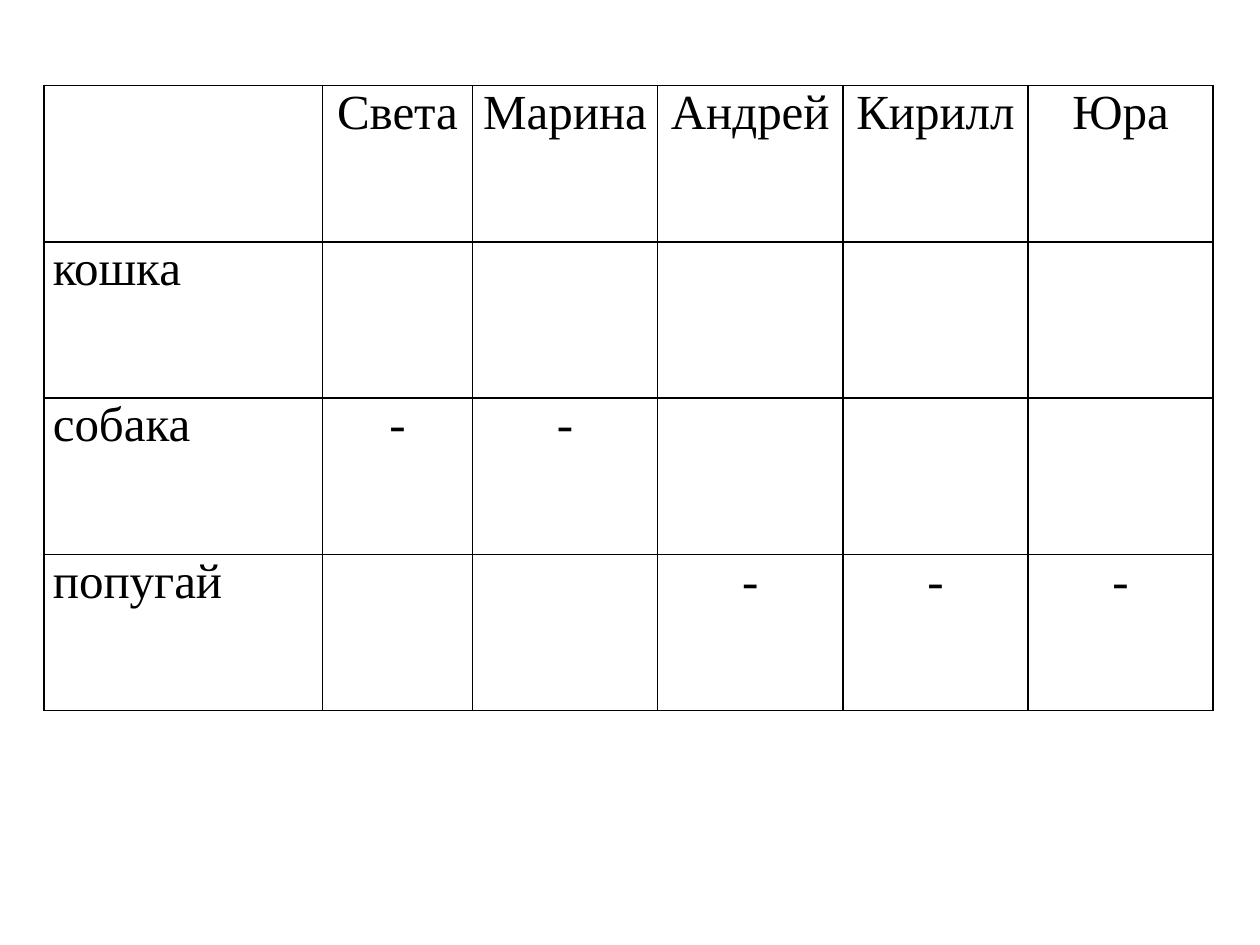
"""Build a slide with a logic table of children and their pets."""
from lxml import etree
from pptx import Presentation
from pptx.dml.color import RGBColor
from pptx.enum.text import PP_ALIGN
from pptx.oxml.ns import qn
from pptx.util import Inches, Pt

CENTER, JUSTIFY = PP_ALIGN.CENTER, PP_ALIGN.JUSTIFY
BLACK = RGBColor(0, 0, 0)
FONT = "Times New Roman"
LEFT, TOP = 0.35, 0.68
COLS = [2.21, 1.19] + [1.47] * 4
ROW = 1.24
ROWS = [
    ["", "Света", "Марина", "Андрей", "Кирилл", "Юра"],
    ["кошка", "", "", "", "", ""],
    ["собака", "-", "-", "", "", ""],
    ["попугай", "", "", "-", "-", "-"],
]


def add_edges(cell):
    props = cell._tc.get_or_add_tcPr()
    for side in ("lnL", "lnR", "lnT", "lnB"):
        line = etree.SubElement(props, qn(f"a:{side}"), w=str(Pt(1)))
        fill = etree.SubElement(line, qn("a:solidFill"))
        etree.SubElement(fill, qn("a:srgbClr"), val=str(BLACK))


def fill_cell(cell, text, align):
    cell.margin_left = cell.margin_right = Inches(0.07)
    cell.margin_top = cell.margin_bottom = 0
    add_edges(cell)
    cell.fill.background()
    cell.text = text
    para = cell.text_frame.paragraphs[0]
    para.alignment = align
    para.space_after = Pt(6)
    para.font.name = FONT
    para.font.size = Pt(28)
    para.font.bold = False
    para.font.color.rgb = BLACK


def add_grid(slide):
    frame = slide.shapes.add_table(
        len(ROWS), len(COLS), Inches(LEFT), Inches(TOP),
        Inches(sum(COLS)), Inches(ROW * len(ROWS)))
    table = frame.table
    table.first_row = table.horz_banding = False
    for col, width in zip(table.columns, COLS):
        col.width = Inches(width)
    for r, row in enumerate(ROWS):
        table.rows[r].height = Inches(ROW)
        for c, text in enumerate(row):
            fill_cell(table.cell(r, c), text, CENTER if c else JUSTIFY)


def main():
    deck = Presentation()
    deck.slide_width, deck.slide_height = Inches(10), Inches(7.5)
    add_grid(deck.slides.add_slide(deck.slide_layouts[6]))
    deck.save("out.pptx")


if __name__ == "__main__":
    main()
